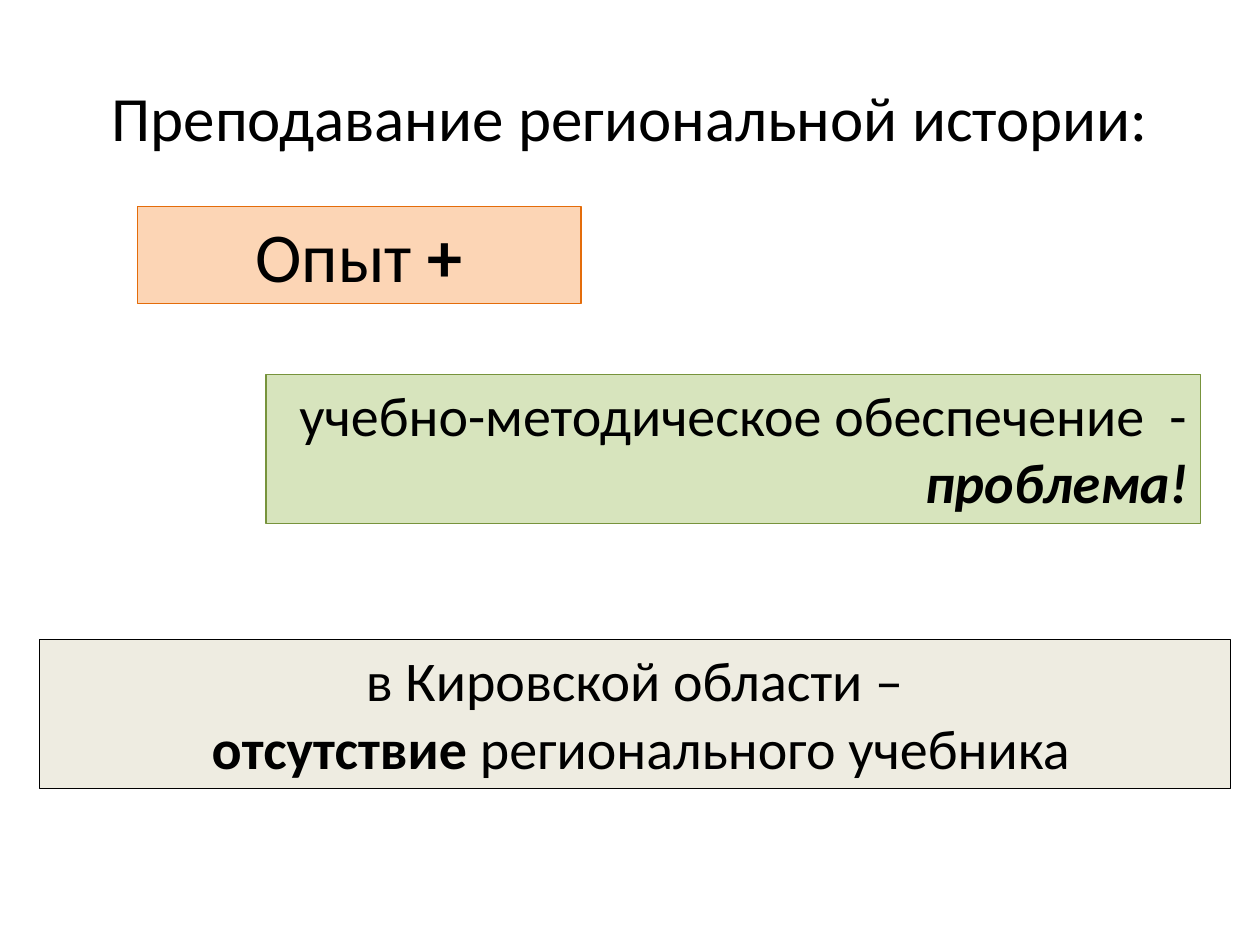
import pptx
import pptx.util
import pptx.dml.color
import pptx.enum.shapes
import pptx.enum.text

Pt = pptx.util.Pt
ALIGN = pptx.enum.text.PP_ALIGN
ANCHOR = pptx.enum.text.MSO_ANCHOR


def color(code):
    return pptx.dml.color.RGBColor.from_string(code)


def write(frame, lines, size, align, anchor):
    """Each line is a list of (text, style); style holds b and/or i."""
    frame.word_wrap = True
    frame.vertical_anchor = anchor
    for n, line in enumerate(lines):
        para = frame.add_paragraph() if n else frame.paragraphs[0]
        para.alignment = align
        para.font.name = "Calibri"
        para.font.size = Pt(size)
        para.font.color.rgb = color("000000")
        for text, style in line:
            run = para.add_run()
            run.text = text
            if "b" in style:
                run.font.bold = True
            if "i" in style:
                run.font.italic = True


def add_title(slide, box, text):
    shape = slide.shapes.add_textbox(*map(Pt, box))
    write(shape.text_frame, [[(text, "")]], 36, ALIGN.CENTER, ANCHOR.MIDDLE)


def add_panel(slide, box, fill, edge, lines, size, align=ALIGN.CENTER):
    kind = pptx.enum.shapes.MSO_SHAPE.RECTANGLE
    shape = slide.shapes.add_shape(kind, *map(Pt, box))
    shape.shadow.inherit = False
    shape.fill.solid()
    shape.fill.fore_color.rgb = color(fill)
    shape.line.color.rgb = color(edge)
    shape.line.width = Pt(0.75)
    write(shape.text_frame, lines, size, align, ANCHOR.TOP)
    shape.text_frame.auto_size = pptx.enum.text.MSO_AUTO_SIZE.SHAPE_TO_FIT_TEXT


def main():
    deck = pptx.Presentation()
    deck.slide_width, deck.slide_height = Pt(720), Pt(540)
    slide = deck.slides.add_slide(deck.slide_layouts[6])

    # Heading
    add_title(slide, (36, 21.6, 648, 90), "Преподавание региональной истории:")

    # Experience: the strong side
    add_panel(slide, (78.5, 118, 253.5, 55.5), "FCD5B5", "E46C0A",
              [[("Опыт ", ""), ("+", "b")]], 40)

    # Teaching materials: the weak side
    add_panel(slide, (152, 214, 534, 85), "D7E4BD", "77933C",
              [[("учебно-методическое обеспечение  - ", ""),
                ("проблема!", "bi")]], 32, ALIGN.RIGHT)

    # Situation in the region
    add_panel(slide, (22.5, 365.5, 680.5, 85), "EEECE1", "000000",
              [[("в Кировской области –", "")],
               [(" ", ""), ("отсутствие ", "b"),
                ("регионального учебника", "")]], 32)

    deck.save("out.pptx")


if __name__ == "__main__":
    main()
